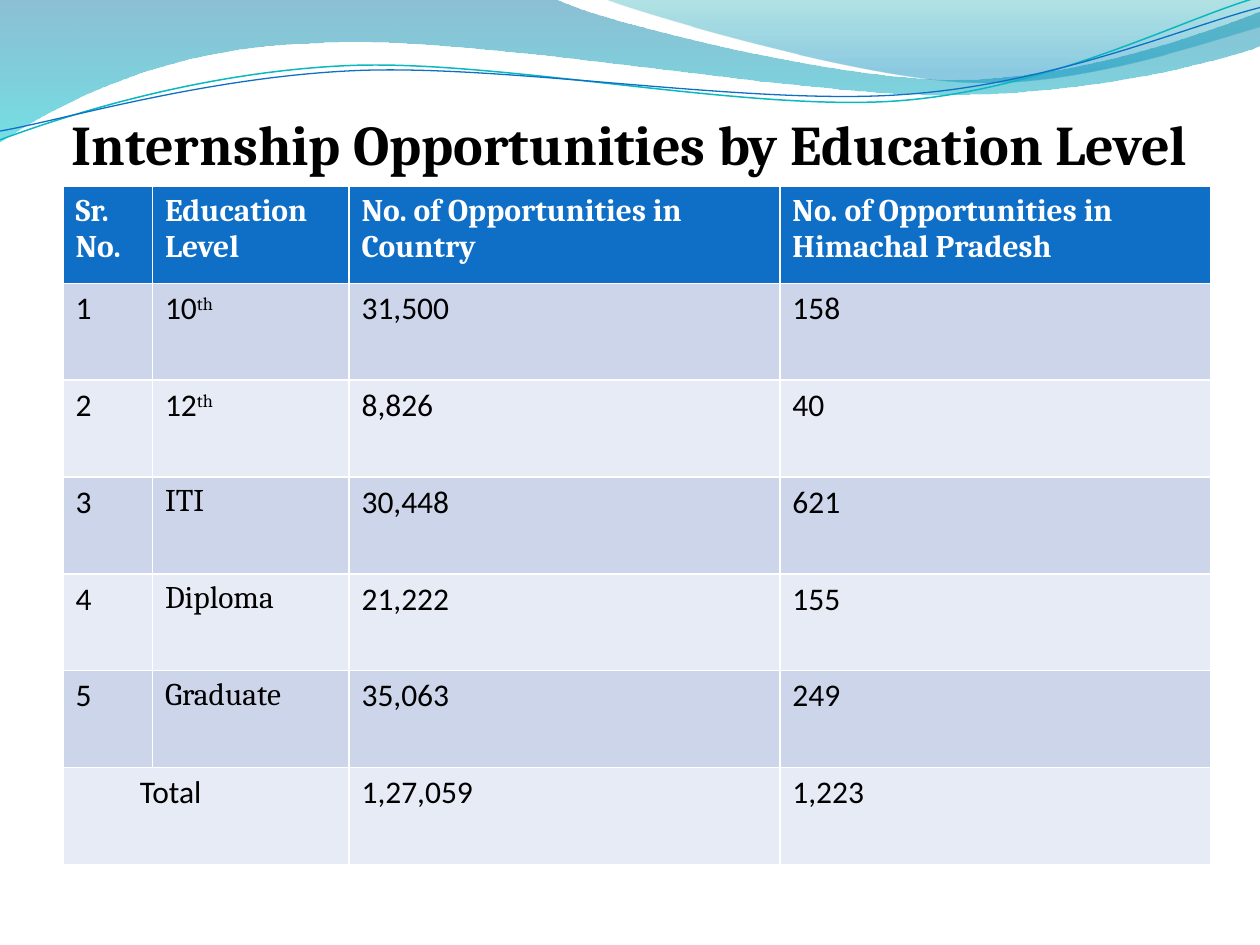
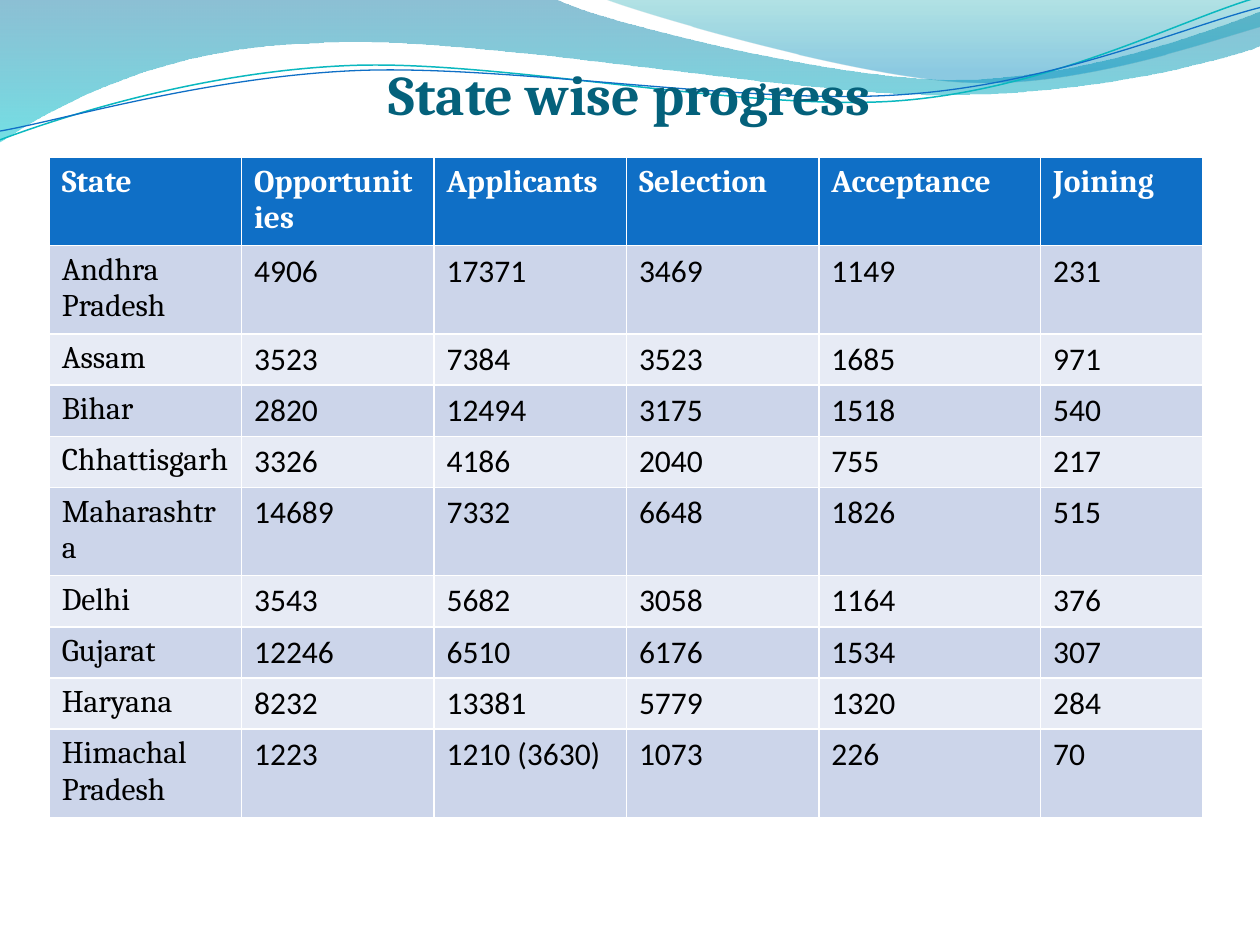
from math import cos, radians, sin

from lxml.etree import SubElement
from pptx import Presentation
from pptx.dml.color import RGBColor
from pptx.enum.text import MSO_ANCHOR, PP_ALIGN
from pptx.oxml.ns import qn
from pptx.util import Inches, Pt

HEADING_FONT, BODY_FONT = "Cambria", "Calibri"
BLACK, WHITE, BLUE, TEAL = "000000", "FFFFFF", "0F6FC6", "04617B"
BANDS = ("CCD5EA", "E7EBF5")
LINE_TILT = -2.7
LINE_CENTER = (4.99, 0.58)

# Wave outlines: a pair is a straight point, a six-tuple a Bezier curve
BROAD_WAVE = [(0, 0), (4.4, -0.01), (4.76, 0.17, 6.64, 0.63, 7.58, 0.63),
              (8.53, 0.63, 9.58, 0.26, 10, 0.09), (10.01, 0.36),
              (9.83, 0.44, 8.7, 0.76, 7.46, 0.75),
              (6.22, 0.75, 3.82, 0.28, 2.57, 0.34),
              (1.29, 0.36, 0.46, 0.83, -0.01, 1.13), (0, 0)]
RIGHT_WAVE = [(4.79, -0.01), (5.09, 0.11, 6.82, 0.62, 7.69, 0.65),
              (8.56, 0.69, 9.61, 0.32, 10, 0.21), (10, 0), (4.79, -0.01)]
TEAL_LINE = [(0, 1.11), (0.48, 0.93, 1.58, 0.57, 2.77, 0.52),
             (3.95, 0.47, 5.93, 0.89, 7.13, 0.8),
             (8.33, 0.71, 9.38, 0.15, 9.98, -0.02)]
BLUE_LINE = [(0, 1.04), (0.47, 0.96, 1.64, 0.61, 2.83, 0.56),
             (4.03, 0.51, 5.97, 0.84, 7.17, 0.75),
             (8.36, 0.67, 9.41, 0.21, 10, 0.06)]

EDUCATION_ROWS = [
    ("Sr. No.", "Education Level", "No. of Opportunities in Country",
     "No. of Opportunities in Himachal Pradesh"),
    ("1", "10^th", "31,500", "158"),
    ("2", "12^th", "8,826", "40"),
    ("3", "ITI", "30,448", "621"),
    ("4", "Diploma", "21,222", "155"),
    ("5", "Graduate", "35,063", "249"),
    ("Total", "", "1,27,059", "1,223"),
]
STATE_ROWS = [
    ("State", "Opportunities", "Applicants", "Selection", "Acceptance", "Joining"),
    ("Andhra Pradesh", "4906", "17371", "3469", "1149", "231"),
    ("Assam", "3523", "7384", "3523", "1685", "971"),
    ("Bihar", "2820", "12494", "3175", "1518", "540"),
    ("Chhattisgarh", "3326", "4186", "2040", "755", "217"),
    ("Maharashtra", "14689", "7332", "6648", "1826", "515"),
    ("Delhi", "3543", "5682", "3058", "1164", "376"),
    ("Gujarat", "12246", "6510", "6176", "1534", "307"),
    ("Haryana", "8232", "13381", "5779", "1320", "284"),
    ("Himachal Pradesh", "1223", "1210 (3630)", "1073", "226", "70"),
]


def color(hex_string):
    return RGBColor.from_string(hex_string)


def add_text(paragraph, text, font=BODY_FONT, size=18, fill=BLACK, bold=False,
             superscript=False):
    run = paragraph.add_run()
    run.text = text
    run.font.name, run.font.size, run.font.bold = font, Pt(size), bold
    run.font.color.rgb = color(fill)
    if superscript:
        run.font._element.set("baseline", "30000")


def level(point, tilt):
    """Turn a point back by the tilt, which the shape's rotation restores."""
    angle = radians(-tilt)
    x, y = point[0] - LINE_CENTER[0], point[1] - LINE_CENTER[1]
    return (LINE_CENTER[0] + x * cos(angle) - y * sin(angle),
            LINE_CENTER[1] + x * sin(angle) + y * cos(angle))


def add_outline(slide, outline, closed, tilt=0):
    points = [level(segment[i:i + 2], tilt)
              for segment in outline for i in range(0, len(segment), 2)]
    points = [(Inches(x), Inches(y)) for x, y in points]
    builder = slide.shapes.build_freeform(*points[0], scale=1.0)
    builder.add_line_segments(points[1:], close=closed)
    shape = builder.convert_to_shape()
    shape.shadow.inherit = False
    shape.rotation = tilt
    # Join each run of three points into one curve
    steps = iter(list(shape._element.iter(qn("a:lnTo"))))
    for segment in outline[1:]:
        first = next(steps)
        if len(segment) == 6:
            first.tag_name = None
            curve = first.makeelement(qn("a:cubicBezTo"))
            first.addprevious(curve)
            for step in (first, next(steps), next(steps)):
                curve.append(step[0])
                step.getparent().remove(step)
    return shape


def add_wave(slide, outline, stops):
    shape = add_outline(slide, outline, closed=True)
    shape.line.fill.background()
    shape.fill.gradient()
    shape.fill.gradient_angle = 270
    for stop, (position, hex_string, opacity) in zip(shape.fill.gradient_stops, stops):
        stop.position = position
        stop.color.rgb = color(hex_string)
        rgb = stop._gs.find(qn("a:srgbClr"))
        SubElement(rgb, qn("a:alpha"), val=str(opacity * 1000))


def add_wave_line(slide, outline, hex_string, width):
    shape = add_outline(slide, outline, closed=False, tilt=LINE_TILT)
    shape.fill.background()
    shape.line.color.rgb = color(hex_string)
    shape.line.width = Pt(width)


def add_wave_band(slide):
    add_wave(slide, BROAD_WAVE, [(0, "0074A1", 45), (1, "00C6CF", 55)])
    add_wave(slide, RIGHT_WAVE, [(0, "00A1A9", 30), (0.8, "008BBF", 45)])
    add_wave_line(slide, TEAL_LINE, "0AB8BF", 0.85)
    add_wave_line(slide, BLUE_LINE, BLUE, 0.75)


def add_title(slide, text, top, height, fill):
    frame = slide.shapes.add_textbox(
        Inches(0.5), Inches(top), Inches(9), Inches(height)).text_frame
    frame.word_wrap = True
    frame.vertical_anchor = MSO_ANCHOR.BOTTOM
    frame.margin_left = frame.margin_right = frame.margin_bottom = 0
    frame.margin_top = Inches(0.05)
    paragraph = frame.paragraphs[0]
    paragraph.alignment = PP_ALIGN.CENTER
    add_text(paragraph, text, font=HEADING_FONT, size=32, fill=fill, bold=True)


def fill_cell(cell, text, row, label):
    header = row == 0
    cell.fill.solid()
    cell.fill.fore_color.rgb = color(BLUE if header else BANDS[(row - 1) % 2])
    paragraph = cell.text_frame.paragraphs[0]
    base, _, raised = text.partition("^")
    if header:
        add_text(paragraph, base, font=HEADING_FONT, fill=WHITE, bold=True)
    elif base:
        plain_label = label and not raised
        add_text(paragraph, base, font=HEADING_FONT if plain_label else BODY_FONT)
    if raised:
        add_text(paragraph, raised, font=HEADING_FONT, superscript=True)


def add_data_table(slide, rows, left, top, column_widths, height, label_column):
    """Add a table; its white rules come from the default table style."""
    table = slide.shapes.add_table(
        len(rows), len(column_widths), Inches(left), Inches(top),
        Inches(sum(column_widths)), Inches(height)).table
    for column, width in zip(table.columns, column_widths):
        column.width = Inches(width)
    for row, texts in enumerate(rows):
        table.rows[row].height = Inches(height / len(rows))
        for column, text in enumerate(texts):
            fill_cell(table.cell(row, column), text, row, column == label_column)
    return table


def build_education_slide(slide):
    add_wave_band(slide)
    add_title(slide, "Internship Opportunities by Education Level", 0.76, 0.64, BLACK)
    table = add_data_table(slide, EDUCATION_ROWS, 0.5, 1.48,
                           [0.71, 1.56, 3.42, 3.42], 5.38, label_column=1)
    # The total spans the number and level columns, with its text indented
    total = table.cell(len(EDUCATION_ROWS) - 1, 0)
    total.merge(table.cell(len(EDUCATION_ROWS) - 1, 1))
    total.margin_left = Inches(0.61)


def build_state_slide(slide):
    add_wave_band(slide)
    add_title(slide, "State wise progress", 0.31, 0.7, TEAL)
    add_data_table(slide, STATE_ROWS, 0.39, 1.25,
                   [6.11 / 4] * 4 + [1.76, 1.29], 4.06, label_column=0)


def main():
    presentation = Presentation()
    presentation.slide_width, presentation.slide_height = Inches(10), Inches(7.5)
    blank = presentation.slide_layouts[6]
    for build in (build_education_slide, build_state_slide):
        build(presentation.slides.add_slide(blank))
    presentation.save("out.pptx")


if __name__ == "__main__":
    main()
